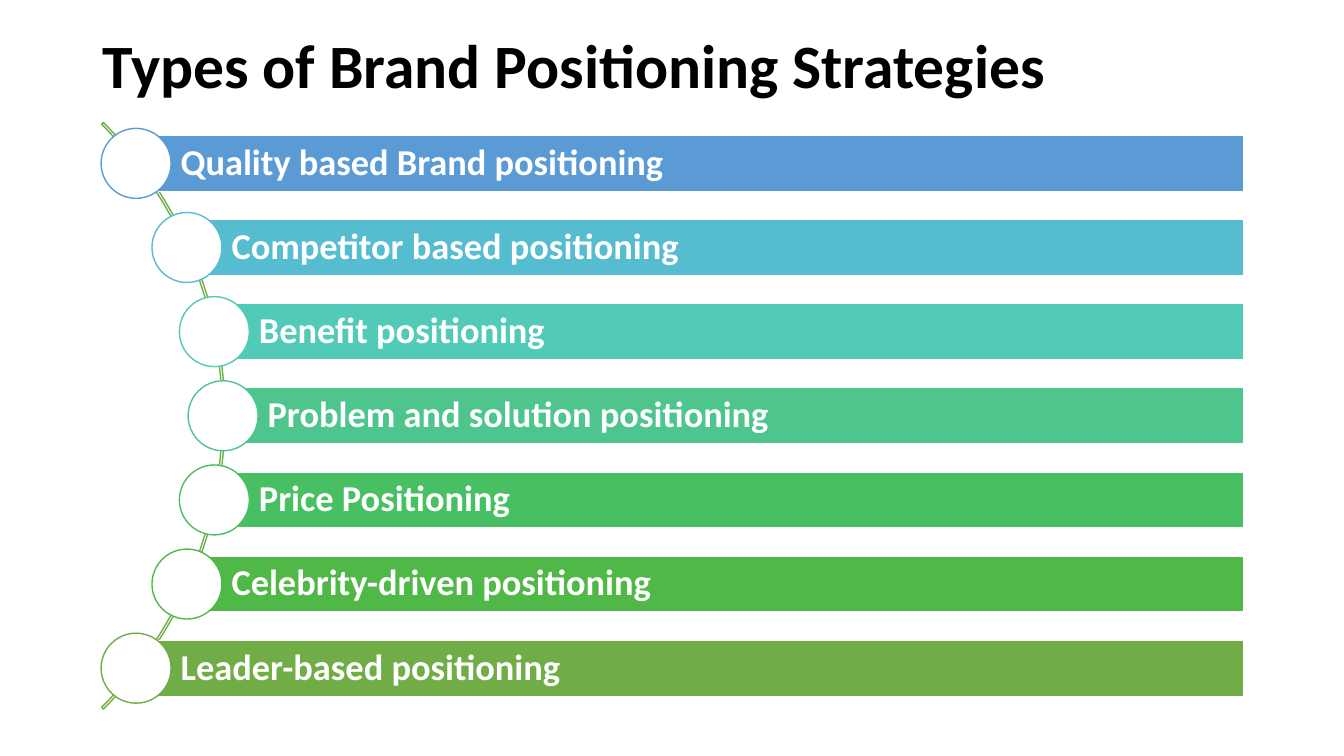
import math

import pptx
import pptx.dml.color
import pptx.enum.shapes
import pptx.enum.text
import pptx.util

Pt = pptx.util.Pt
KINDS = pptx.enum.shapes.MSO_SHAPE
ALIGN = pptx.enum.text.PP_ALIGN
MIDDLE = pptx.enum.text.MSO_ANCHOR.MIDDLE
NO_FIT = pptx.enum.text.MSO_AUTO_SIZE.NONE

WHITE = "FFFFFF"
GREEN = "70AD47"
TYPES = [
    ("Quality based Brand positioning", "5B9BD5"),
    ("Competitor based positioning", "56BCD0"),
    ("Benefit positioning", "52CAB8"),
    ("Problem and solution positioning", "4DC58D"),
    ("Price Positioning", "49BF64"),
    ("Celebrity-driven positioning", "50B846"),
    ("Leader-based positioning", GREEN),
]

# Lengths in points
MID_Y = 297
STEP = 60.1
CURVE_X, RADIUS = -133.1, 292.5
RIGHT = 888.4
BAR_H = 40
DOT = 50


def paint(target, color):
    target.rgb = pptx.dml.color.RGBColor.from_string(color)


def assign(target, values):
    for name, value in values.items():
        setattr(target, name, value)


def write(shape, text, size, color, frame):
    box = shape.text_frame
    box.text = text
    assign(box, {"word_wrap": True, "auto_size": NO_FIT,
                 "vertical_anchor": MIDDLE, **frame})
    line = box.paragraphs[0]
    assign(line, {"alignment": ALIGN.LEFT, "line_spacing": 0.9})
    font = line.runs[0].font
    assign(font, {"name": "Calibri", "size": Pt(size), "bold": True})
    paint(font.color, color)


def add_shape(slide, kind, left, top, width, height, fill, edge):
    shape = slide.shapes.add_shape(
        kind, Pt(left), Pt(top), Pt(width), Pt(height))
    shape.shadow.inherit = False
    if fill:
        shape.fill.solid()
        paint(shape.fill.fore_color, fill)
    else:
        shape.fill.background()
    paint(shape.line.color, edge)
    shape.line.width = Pt(1)
    return shape


def add_title(slide, text):
    title = slide.shapes.title
    assign(title, {"left": Pt(66.2), "top": Pt(11.5),
                   "width": Pt(828), "height": Pt(75.6)})
    write(title, text, 44, "000000", {})


def add_arc(slide):
    arc = add_shape(slide, KINDS.BLOCK_ARC, -432, 0.7, 592.6, 592.6,
                    None, GREEN)
    for i, value in enumerate((189, 27, 0.003)):
        arc.adjustments[i] = value


def add_type(slide, text, color, offset):
    """Place a bar and its circle on the curve, offset from its middle."""
    x = CURVE_X + math.sqrt(RADIUS ** 2 - offset ** 2)
    y = MID_Y + offset
    bar = add_shape(slide, KINDS.RECTANGLE, x, y - BAR_H / 2,
                    RIGHT - x, BAR_H, color, WHITE)
    write(bar, text, 26, WHITE, {
        "margin_left": Pt(31.8), "margin_right": Pt(5),
        "margin_top": Pt(5), "margin_bottom": Pt(5)})
    add_shape(slide, KINDS.OVAL, x - DOT / 2, y - DOT / 2, DOT, DOT,
              WHITE, color)


def main():
    deck = pptx.Presentation()
    assign(deck, {"slide_width": Pt(960), "slide_height": Pt(540)})
    slide = deck.slides.add_slide(deck.slide_layouts[5])
    add_title(slide, "Types of Brand Positioning Strategies")
    add_arc(slide)
    middle = (len(TYPES) - 1) / 2
    for i, (text, color) in enumerate(TYPES):
        add_type(slide, text, color, (i - middle) * STEP)
    deck.save("out.pptx")


if __name__ == "__main__":
    main()
